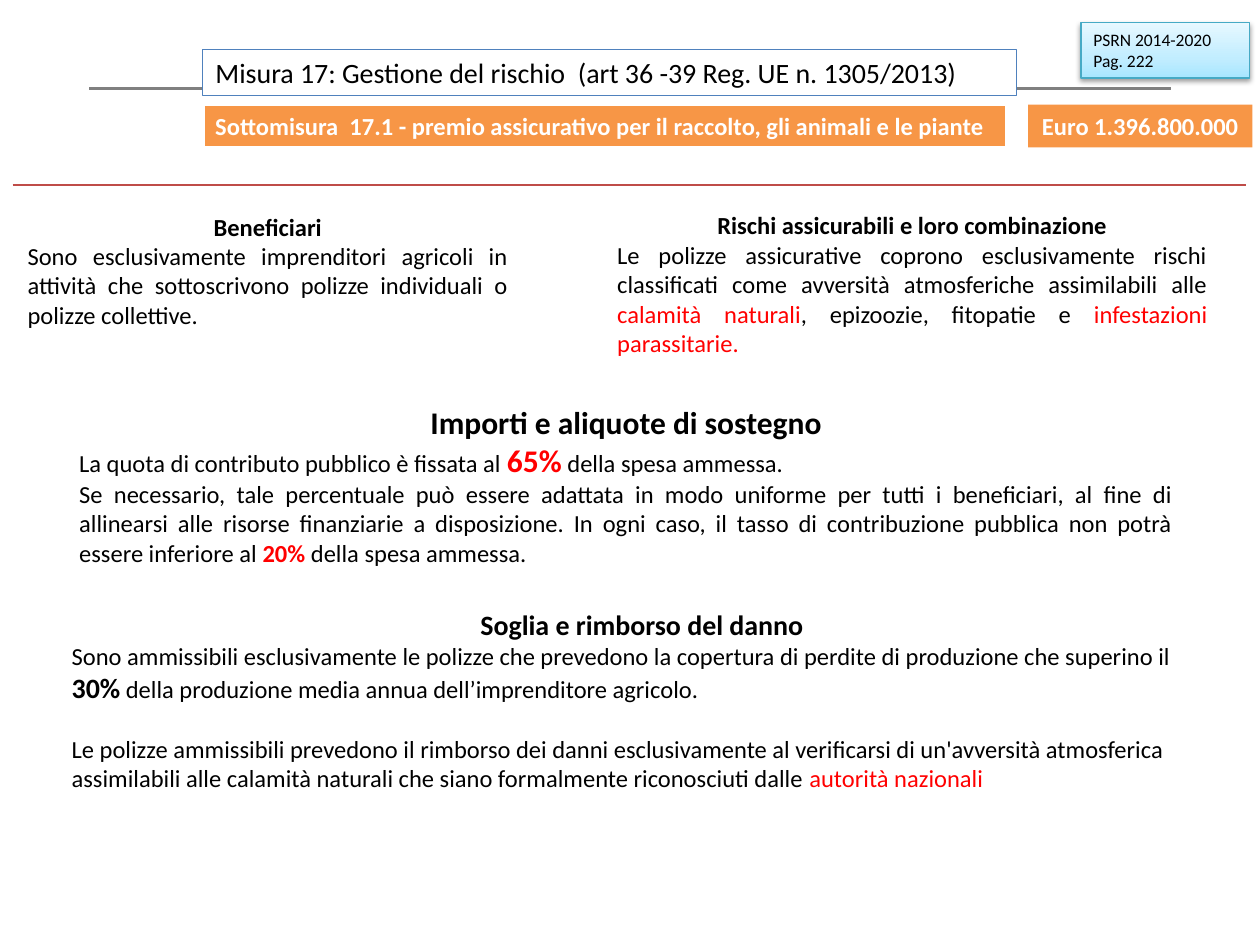
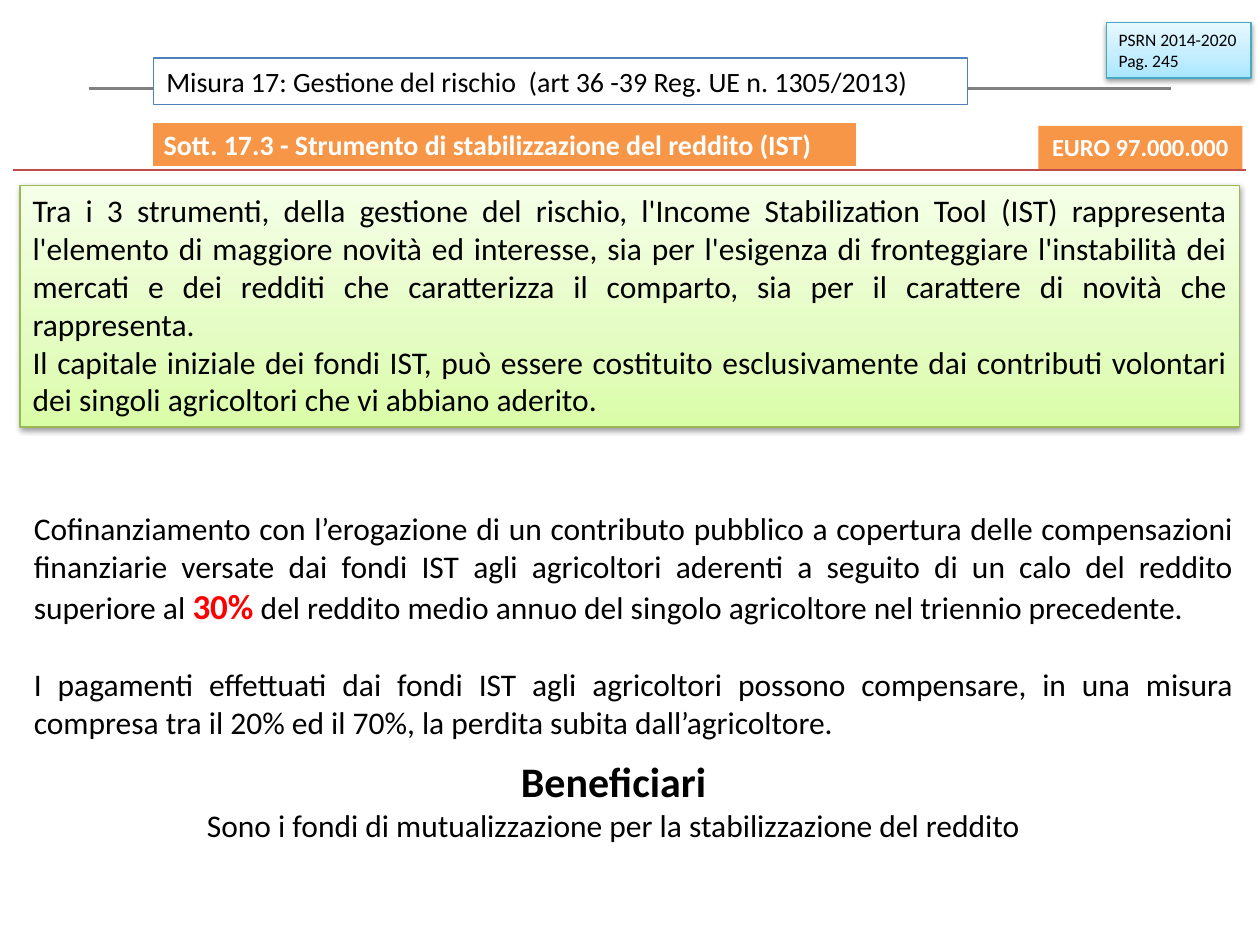
from typing import NamedTuple, Optional

from lxml import etree
from pptx import Presentation
from pptx.dml.color import RGBColor
from pptx.enum.shapes import MSO_CONNECTOR, MSO_SHAPE
from pptx.enum.text import MSO_ANCHOR, MSO_AUTO_SIZE, PP_ALIGN as AL
from pptx.oxml import parse_xml
from pptx.oxml.ns import nsdecls, qn
from pptx.util import Emu, Inches, Pt

# Grid: 100 columns by 75 rows
WIDTH, HEIGHT = Inches(10), Inches(7.5)
COL, ROW = WIDTH / 100, HEIGHT / 75

# Shared look
FONT = "Calibri"
BLACK, WHITE, RED, ORANGE = "000000", "FFFFFF", "FF0000", "F79646"
GREY, RULE_RED, TITLE_BLUE = "808080", "BF4C48", "4F81BD"
TITLE = "Misura 17: Gestione del rischio  (art 36 -39 Reg. UE n. 1305/2013)"


class Box(NamedTuple):
    left: float
    top: float
    width: float
    height: float

    def emu(self) -> tuple[Emu, Emu, Emu, Emu]:
        return (Emu(round(self.left * COL)), Emu(round(self.top * ROW)),
                Emu(round(self.width * COL)), Emu(round(self.height * ROW)))


class Run(NamedTuple):
    text: str
    size: float = 14
    color: str = BLACK
    bold: bool = False


class Par(NamedTuple):
    runs: list[Run]
    align: AL = AL.LEFT
    before: float = 0


class Glow(NamedTuple):
    """A vertical gradient, from bottom to top, with its outline."""
    stops: tuple[str, str, str]
    line: str


class Header(NamedTuple):
    title: Box
    measure: Box
    measure_run: Run
    budget: Box
    budget_text: str
    rule_row: float
    source: Box
    page: int


SKY = Glow(("A7E6FF", "C1EDFF", "E7F8FF"), "46AAC5")
LIME = Glow(("DAFDA7", "E4FCC2", "F5FFE7"), "98B955")


def rgb(color: str) -> RGBColor:
    return RGBColor.from_string(color)


def write(sp, pars: list[Par], wrap: bool = True) -> None:
    tf = sp.text_frame
    tf.word_wrap = wrap
    tf.auto_size = MSO_AUTO_SIZE.NONE
    tf.vertical_anchor = MSO_ANCHOR.TOP
    for i, par in enumerate(pars):
        p = tf.add_paragraph() if i else tf.paragraphs[0]
        p.alignment = par.align
        p.space_before = Pt(par.before)
        for run in par.runs:
            r = p.add_run()
            r.text = run.text
            r.font.name, r.font.size, r.font.bold = FONT, Pt(run.size), run.bold
            r.font.color.rgb = rgb(run.color)


def add_text(s, box: Box, pars: list[Par]) -> None:
    write(s.shapes.add_textbox(*box.emu()), pars)


def add_band(s, box: Box, par: Par, line: Optional[str] = None, wrap: bool = True) -> None:
    sp = s.shapes.add_shape(MSO_SHAPE.RECTANGLE, *box.emu())
    sp.shadow.inherit = False
    sp.fill.solid()
    sp.fill.fore_color.rgb = rgb(ORANGE)
    if line:
        sp.line.color.rgb, sp.line.width = rgb(line), Pt(2)
    else:
        sp.line.fill.background()
    write(sp, [par], wrap)


def add_glow_box(s, box: Box, glow: Glow, pars: list[Par]) -> None:
    sp = s.shapes.add_shape(MSO_SHAPE.RECTANGLE, *box.emu())
    sp.shadow.inherit = False
    sp.line.color.rgb, sp.line.width = rgb(glow.line), Pt(0.75)
    stops = "".join(f'<a:gs pos="{pos * 1000}"><a:srgbClr val="{color}"/></a:gs>'
                    for pos, color in zip((0, 35, 100), glow.stops))
    props = sp._element.spPr
    props.find(qn("a:prstGeom")).addnext(parse_xml(
        f'<a:gradFill {nsdecls("a")} rotWithShape="1"><a:gsLst>{stops}</a:gsLst>'
        f'<a:lin ang="{270 * 60000}" scaled="0"/></a:gradFill>'))
    props.find(qn("a:effectLst")).append(parse_xml(
        f'<a:outerShdw {nsdecls("a")} blurRad="{Pt(3.1)}" dist="{Pt(1.6)}" '
        f'dir="{90 * 60000}" rotWithShape="0"><a:srgbClr val="{BLACK}">'
        '<a:alpha val="38000"/></a:srgbClr></a:outerShdw>'))
    write(sp, pars)


def add_rule(s, left: float, right: float, row: float, color: str, width: float):
    x, y, length, _ = Box(left, row, right - left, 0).emu()
    line = s.shapes.add_connector(MSO_CONNECTOR.STRAIGHT, x, y, x + length, y)
    line.line.color.rgb, line.line.width = rgb(color), Pt(width)
    etree.SubElement(line._element.spPr, qn("a:effectLst"))
    return line


def add_header(s, h: Header) -> None:
    title = s.shapes.title
    title.left, title.top, title.width, title.height = h.title.emu()
    title.fill.solid()
    title.fill.fore_color.rgb = rgb(WHITE)
    title.line.color.rgb, title.line.width = rgb(TITLE_BLUE), Pt(0.75)
    write(title, [Par([Run(TITLE, 16)])])
    add_band(s, h.measure, Par([h.measure_run]), line=WHITE)
    add_rule(s, 1, 98.9, h.rule_row, RULE_RED, 1.5)
    add_band(s, h.budget, Par([Run(h.budget_text, 14, WHITE, True)], AL.CENTER), wrap=False)
    add_glow_box(s, h.source, SKY, [Par([Run("PSRN 2014-2020", 10)]),
                                    Par([Run(f"Pag. {h.page}", 10)])])


def heading(text: str, size: float) -> Par:
    return Par([Run(text, size, bold=True)], AL.CENTER)


def build_insurance(s) -> None:
    add_header(s, Header(
        Box(16.1, 3.9, 64.6, 3.7), Box(16.1, 8.3, 63.8, 3.4),
        Run("Sottomisura  17.1 - premio assicurativo per il raccolto, gli animali e le piante",
            14, WHITE, True),
        Box(81.6, 8.3, 17.8, 3.4), "Euro 1.396.800.000", 14.7,
        Box(85.8, 1.8, 13.4, 4.4), 222))

    # Beneficiaries and insurable risks
    add_text(s, Box(1.2, 16.3, 40.1, 10.4), [
        heading("Beneficiari", 14),
        Par([Run("Sono esclusivamente imprenditori agricoli in attività che sottoscrivono "
                 "polizze individuali o polizze collettive.")], AL.JUSTIFY)])
    add_text(s, Box(48, 16.2, 48.8, 12.8), [
        heading("Rischi assicurabili e loro combinazione", 14),
        Par([Run("Le polizze assicurative coprono esclusivamente rischi classificati come "
                 "avversità atmosferiche assimilabili alle "),
             Run("calamità naturali", color=RED),
             Run(", epizoozie, fitopatie e "),
             Run("infestazioni parassitarie.", color=RED)], AL.JUSTIFY)])

    # Support rates
    add_text(s, Box(5.3, 31.5, 88.8, 14.1), [
        heading("Importi e aliquote di sostegno", 18),
        Par([Run("La quota di contributo pubblico è fissata al "),
             Run("65%", 18, RED, True),
             Run(" della spesa ammessa.")], AL.JUSTIFY),
        Par([Run("Se necessario, tale percentuale può essere adattata in modo uniforme per "
                 "tutti i beneficiari, al fine di allinearsi alle risorse finanziarie a "
                 "disposizione. In ogni caso, il tasso di contribuzione pubblica non potrà "
                 "essere inferiore al "),
             Run("20%", color=RED, bold=True),
             Run(" della spesa ammessa.")], AL.JUSTIFY)])

    # Damage threshold
    add_text(s, Box(4.7, 47.7, 92.5, 15.8), [
        heading("Soglia e rimborso del danno", 16),
        Par([Run("Sono ammissibili esclusivamente le polizze che prevedono la copertura di "
                 "perdite di produzione che superino il "),
             Run("30%", 16, bold=True),
             Run(" della produzione media annua dell’imprenditore agricolo.")]),
        Par([Run("Le polizze ammissibili prevedono il rimborso dei danni esclusivamente al "
                 "verificarsi di un'avversità atmosferica assimilabili alle calamità "
                 "naturali che siano formalmente riconosciuti dalle "),
             Run("autorità nazionali", color=RED)], before=17)])


def build_income_tool(s) -> None:
    add_header(s, Header(
        Box(12.2, 4.6, 64.6, 3.7), Box(12, 9.6, 56.1, 3.7),
        Run("Sott. 17.3 - Strumento di stabilizzazione del reddito (IST)", 16, WHITE, True),
        Box(82.4, 10, 16.2, 3.4), "EURO 97.000.000", 13.5,
        Box(87.8, 1.8, 11.5, 4.4), 245))

    # What the tool is
    add_glow_box(s, Box(1.6, 14.7, 96.8, 19.2), LIME, [
        Par([Run("Tra i 3 strumenti, della gestione del rischio, l'Income Stabilization Tool "
                 "(IST) rappresenta l'elemento di maggiore novità ed interesse, sia per "
                 "l'esigenza di fronteggiare l'instabilità dei mercati e dei redditi che "
                 "caratterizza il comparto, sia per il carattere di novità che rappresenta.",
                 18)], AL.JUSTIFY),
        Par([Run("Il capitale iniziale dei fondi IST, può essere costituito esclusivamente "
                 "dai contributi volontari dei singoli agricoltori che vi abbiano aderito.",
                 18)], AL.JUSTIFY)])

    # Public co-financing
    add_text(s, Box(1.7, 39.9, 97.2, 19.5), [
        Par([Run("Cofinanziamento con l’erogazione di un contributo pubblico a copertura "
                 "delle compensazioni finanziarie versate dai fondi IST agli agricoltori "
                 "aderenti a seguito di un calo del reddito superiore al ", 18),
             Run("30%", 20, RED, True),
             Run(" del reddito medio annuo del singolo agricoltore nel triennio precedente.",
                 18)], AL.JUSTIFY),
        Par([Run("I pagamenti effettuati dai fondi IST agli agricoltori possono compensare, "
                 "in una misura compresa tra il 20% ed il 70%, la perdita subita "
                 "dall’agricoltore.", 18)], AL.JUSTIFY, 22)])

    # Beneficiaries
    add_text(s, Box(1.7, 59.5, 94, 8.1), [
        heading("Beneficiari", 24),
        Par([Run("Sono i fondi di mutualizzazione per la stabilizzazione del reddito", 18)],
            AL.CENTER)])


def main() -> None:
    prs = Presentation()
    prs.slide_width, prs.slide_height = WIDTH, HEIGHT
    layout = prs.slide_layouts[5]
    for build in (build_insurance, build_income_tool):
        s = prs.slides.add_slide(layout)
        # Grey rule behind the title
        rule = add_rule(s, 7.1, 92.9, 7, GREY, 1.75)
        s.shapes.title._element.addprevious(rule._element)
        build(s)
    prs.save("out.pptx")


if __name__ == "__main__":
    main()
